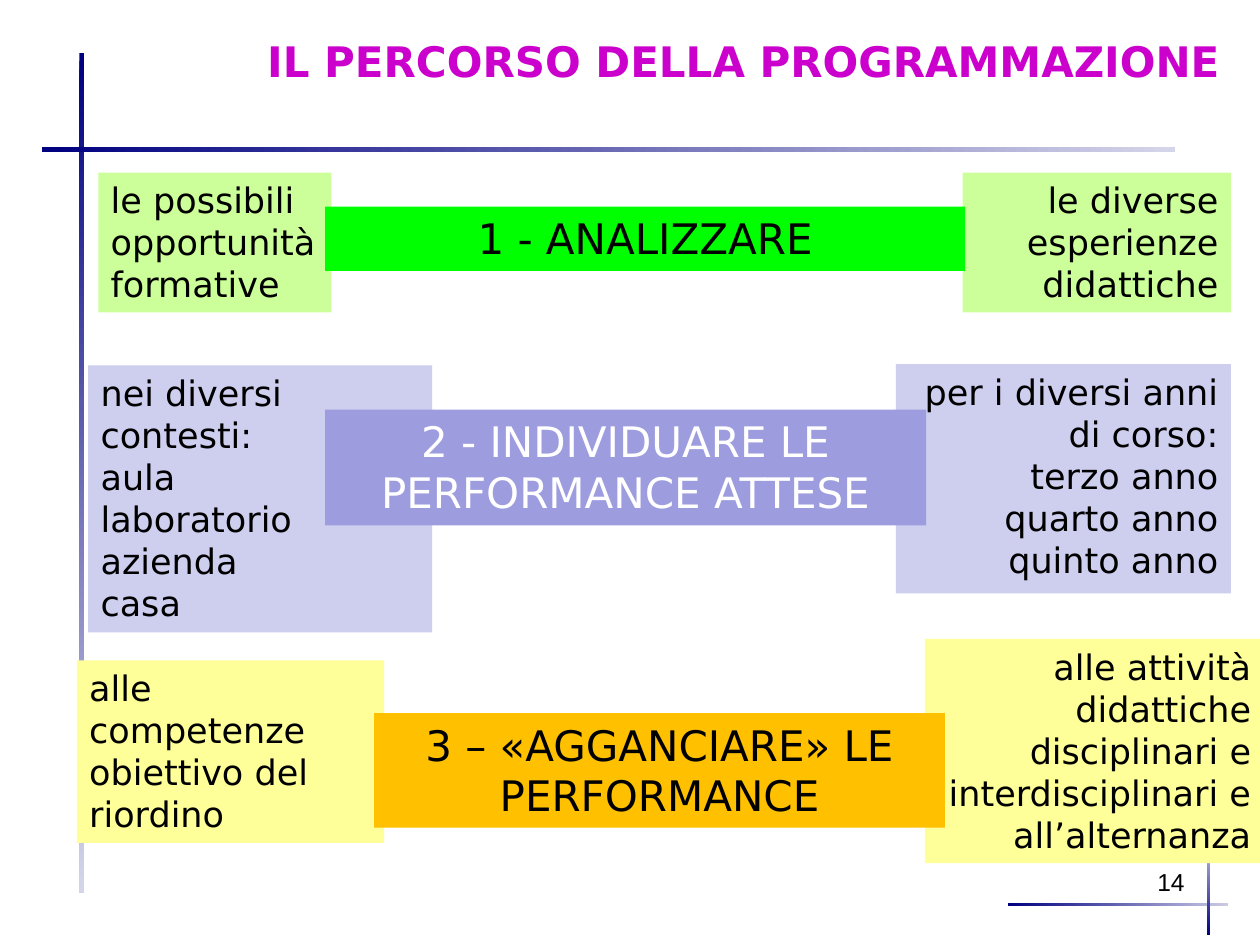
from pptx import Presentation, util as u
from pptx.dml.color import RGBColor
from pptx.enum import shapes, text

HUES = {
    "navy": "000080", "pale": "D5D5EA", "mist": "CBCBE5", "title": "CC00CC",
    "black": "000000", "white": "FFFFFF", "yellow": "FFFF99", "orange": "FFC000",
    "lilac": "CECEEF", "violet": "9C9CDF", "lime": "CCFF99", "green": "00FF00",
}
ALIGN = {"l": text.PP_ALIGN.LEFT, "c": text.PP_ALIGN.CENTER, "r": text.PP_ALIGN.RIGHT}

RULES = [
    ((0.63, 0.42, 0.04, 6.67), "navy", "pale", 270),
    ((8, 7.17, 1.75, 0.02), "navy", "mist", 0),
    ((9.58, 6.67, 0.02, 0.75), "mist", "navy", 270),
    ((0.33, 1.17, 9, 0.04), "navy", "pale", 0),
]
STEPS = [
    {"side": "yellow", "main": "orange", "ink": "black",
     "right": ((7.34, 5.07, 2.69, 1.78),
               ["alle attività didattiche disciplinari e interdisciplinari e all’alternanza"]),
     "left": ((0.61, 5.24, 2.44, 1.45), ["alle competenze obiettivo del riordino"]),
     "mid": ((2.97, 5.66, 4.53, 0.91), ["3 – «AGGANCIARE» LE PERFORMANCE"])},
    {"side": "lilac", "main": "violet", "ink": "white",
     "right": ((7.11, 2.89, 2.66, 1.82),
               ["per i diversi anni di corso:", "terzo anno", "quarto anno", "quinto anno"]),
     "left": ((0.7, 2.9, 2.73, 2.12),
              ["nei diversi contesti:", "aula", "laboratorio", "azienda", "casa"]),
     "mid": ((2.58, 3.25, 4.77, 0.92), ["2 - INDIVIDUARE LE PERFORMANCE ATTESE"])},
    {"side": "lime", "main": "green", "ink": "black",
     "right": ((7.64, 1.37, 2.13, 1.11), ["le diverse esperienze didattiche"]),
     "left": ((0.78, 1.37, 1.85, 1.11), ["le possibili opportunità formative"]),
     "mid": ((2.58, 1.64, 5.08, 0.51), ["1 - ANALIZZARE"])},
]

deck = Presentation()
deck.slide_width, deck.slide_height = u.Inches(10), u.Inches(7.5)
slide = deck.slides.add_slide(deck.slide_layouts[6])


def hue(name):
    return RGBColor.from_string(HUES[name])


def block(box):
    shape = slide.shapes.add_shape(shapes.MSO_SHAPE.RECTANGLE, *map(u.Inches, box))
    shape.shadow.inherit = False
    shape.line.fill.background()
    return shape


def write(box, lines, fill=None, ink="black", size=20, align="l", bold=False,
          face="DejaVu Sans"):
    if fill:
        shape = block(box)
        shape.fill.solid()
        shape.fill.fore_color.rgb = hue(fill)
    else:
        shape = slide.shapes.add_textbox(*map(u.Inches, box))
    frame = shape.text_frame
    frame.word_wrap = True
    frame.vertical_anchor = text.MSO_ANCHOR.TOP
    frame.text = "\n".join(lines)
    for para in frame.paragraphs:
        para.alignment = ALIGN[align]
        font = para.runs[0].font
        font.name, font.size, font.bold = face, u.Pt(size), bold
        font.color.rgb = hue(ink)


for box, start, end, angle in RULES:
    fill = block(box).fill
    fill.gradient()
    fill.gradient_angle = angle
    for stop, name in zip(fill.gradient_stops, (start, end)):
        stop.color.rgb = hue(name)

write((1.8, 0.23, 8.2, 0.51), ["IL PERCORSO DELLA PROGRAMMAZIONE"],
      ink="title", size=24, align="c", bold=True)

for step in STEPS:
    write(*step["right"], fill=step["side"], align="r")
    write(*step["left"], fill=step["side"])
    write(*step["mid"], fill=step["main"], ink=step["ink"], size=24, align="c")

write((7.17, 6.83, 2.33, 0.52), ["14"], size=14, align="r", face="Arial")

deck.save("out.pptx")
